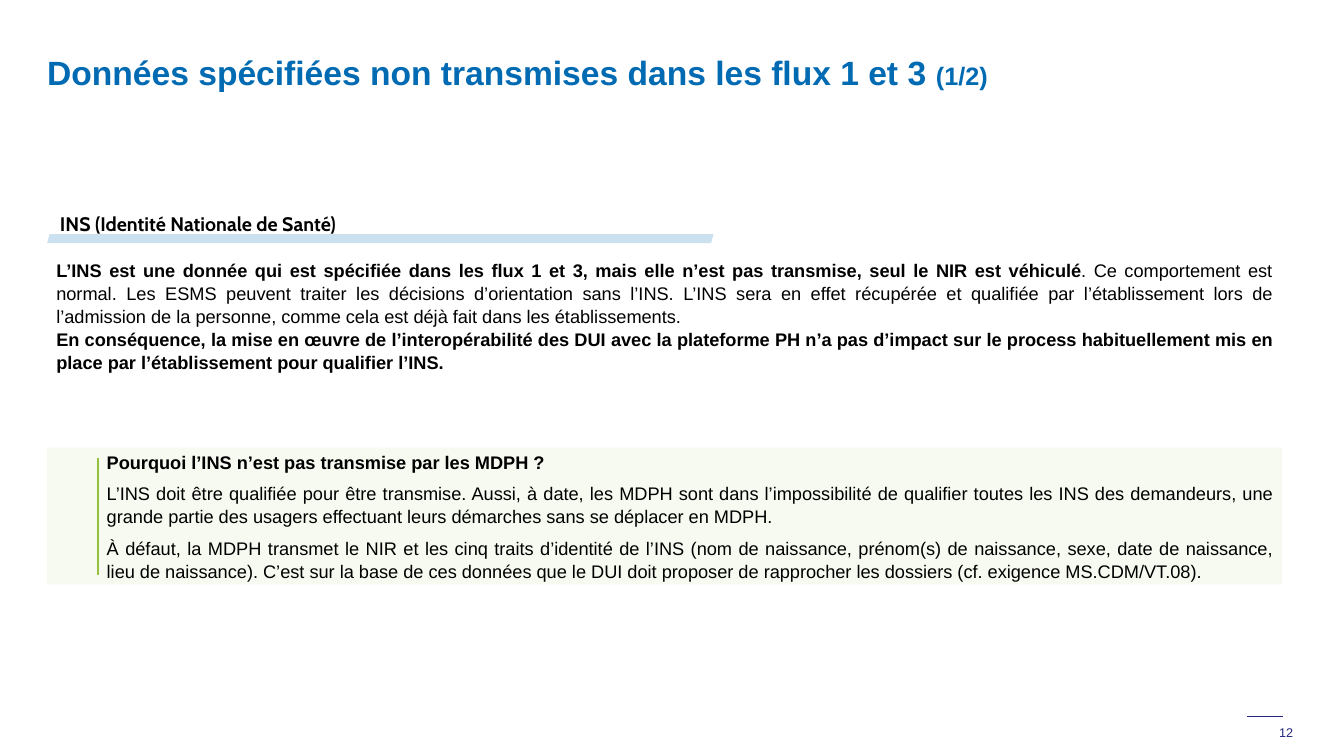
from pptx import Presentation
from pptx.dml.color import RGBColor
from pptx.enum.shapes import MSO_CONNECTOR, MSO_SHAPE
from pptx.enum.text import MSO_ANCHOR, PP_ALIGN
from pptx.oxml.ns import qn
from pptx.util import Cm, Pt
from lxml import etree

BLUE = RGBColor(0x00, 0x6A, 0xB2)
NAVY = RGBColor(0x23, 0x27, 0x7E)
BLACK = RGBColor(0x00, 0x00, 0x00)
GREEN = RGBColor(0x95, 0xC2, 0x3D)
PALE_GREEN = RGBColor(0xF7, 0xFA, 0xF0)

RECTANGLE = MSO_SHAPE.RECTANGLE
PARALLELOGRAM = MSO_SHAPE.PARALLELOGRAM
STRAIGHT = MSO_CONNECTOR.STRAIGHT
TOP, MIDDLE, BOTTOM = MSO_ANCHOR.TOP, MSO_ANCHOR.MIDDLE, MSO_ANCHOR.BOTTOM
LEFT, RIGHT, JUSTIFY = PP_ALIGN.LEFT, PP_ALIGN.RIGHT, PP_ALIGN.JUSTIFY

MARGIN = 1.19
NO_INSETS = (0, 0, 0, 0)
DEFAULT_INSETS = (0.25, 0.13, 0.25, 0.13)

INS_TEXT = [
    [("L’INS est une donnée qui est spécifiée dans les flux 1 et 3, mais elle n’est pas "
      "transmise, seul le NIR est véhiculé", True),
     (". Ce comportement est normal. Les ESMS peuvent traiter les décisions d’orientation "
      "sans l’INS. L’INS sera en effet récupérée et qualifiée par l’établissement lors de "
      "l’admission de la personne, comme cela est déjà fait dans les établissements.", False)],
    [("En conséquence, la mise en œuvre de l’interopérabilité des DUI avec la plateforme PH "
      "n’a pas d’impact sur le process habituellement mis en place par l’établissement pour "
      "qualifier l’INS.", True)],
]
WHY_TEXT = [
    [("Pourquoi l’INS n’est pas transmise par les MDPH ?", True)],
    [("L’INS doit être qualifiée pour être transmise. Aussi, à date, les MDPH sont dans "
      "l’impossibilité de qualifier toutes les INS des demandeurs, une grande partie des "
      "usagers effectuant leurs démarches sans se déplacer en MDPH.", False)],
    [("À défaut, la MDPH transmet le NIR et les cinq traits d’identité de l’INS (nom de "
      "naissance, prénom(s) de naissance, sexe, date de naissance, lieu de naissance). C’est "
      "sur la base de ces données que le DUI doit proposer de rapprocher les dossiers "
      "(cf. exigence MS.CDM/VT.08).", False)],
]


def set_frame(box, anchor, insets):
    """Wrap the text and set its anchor and its left, top, right and bottom insets in cm."""
    frame = box.text_frame
    frame.word_wrap = True
    frame.vertical_anchor = anchor
    (frame.margin_left, frame.margin_top,
     frame.margin_right, frame.margin_bottom) = map(Cm, insets)
    return frame


def set_font(font, size, color, name="Arial", bold=False):
    font.name, font.size, font.bold = name, Pt(size), bold
    font.color.rgb = color


def add_label(page, text, place, size, color, anchor=MIDDLE, insets=NO_INSETS,
              align=LEFT, name="Arial", bold=True):
    box = page.shapes.add_textbox(*map(Cm, place))
    para = set_frame(box, anchor, insets).paragraphs[0]
    para.text = text
    para.alignment = align
    set_font(para.font, size, color, name, bold)
    return para


def fill_body(frame, paragraphs, space_after=0):
    """Write justified paragraphs, each a list of (text, bold) spans."""
    for index, spans in enumerate(paragraphs):
        para = frame.add_paragraph() if index else frame.paragraphs[0]
        para.alignment = JUSTIFY
        para.line_spacing = 1.05
        para.space_after = Pt(space_after)
        set_font(para.font, 13, BLACK, bold=spans[0][1])
        for text, bold in spans:
            span = para.add_run()
            span.text = text
            if bold != spans[0][1]:
                span.font.bold = bold


def add_block(page, preset, place, color, opacity=100):
    block = page.shapes.add_shape(preset, *map(Cm, place))
    block.shadow.inherit = False
    block.line.fill.background()
    block.fill.solid()
    block.fill.fore_color.rgb = color
    if opacity < 100:
        tint = block.fill._xPr.find(".//" + qn("a:srgbClr"))
        etree.SubElement(tint, qn("a:alpha")).set("val", str(opacity * 1000))
    return block


def add_rule(page, start_x, start_y, end_x, end_y, color, width):
    rule = page.shapes.add_connector(STRAIGHT, Cm(start_x), Cm(start_y), Cm(end_x), Cm(end_y))
    rule.line.color.rgb = color
    rule.line.width = Pt(width)
    etree.SubElement(rule._element.spPr, qn("a:effectLst"))


def main():
    deck = Presentation()
    deck.slide_width, deck.slide_height = Cm(33.87), Cm(19.05)
    page = deck.slides.add_slide(deck.slide_layouts[6])

    add_label(page, "12", (31.42, 18.08, 1.17, 0.56), 9, NAVY, BOTTOM, align=RIGHT, bold=False)
    add_rule(page, 32.33, 18.06, 31.42, 18.06, NAVY, 0.5)

    title = add_label(page, "Données spécifiées non transmises dans les flux 1 et 3 ",
                      (MARGIN, 0.76, 25.98, 1.57), 24, BLUE, BOTTOM)
    part = title.add_run()
    part.text = "(1/2)"
    part.font.size = Pt(18)

    add_label(page, "INS (Identité Nationale de Santé)", (1.26, 4.98, 17.43, 1.32), 14, BLACK,
              insets=DEFAULT_INSETS, name="Cabin")
    add_block(page, PARALLELOGRAM, (MARGIN, 5.9, 16.79, 0.23), BLUE, opacity=20)

    body = page.shapes.add_textbox(Cm(1.17), Cm(6.38), Cm(31.14), Cm(3.58))
    fill_body(set_frame(body, TOP, DEFAULT_INSETS), INS_TEXT)

    why = add_block(page, RECTANGLE, (MARGIN, 11.28, 31.12, 3.45), PALE_GREEN)
    fill_body(set_frame(why, MIDDLE, (1.5, 0.13, 0.25, 0.13)), WHY_TEXT, space_after=6)
    add_rule(page, 2.46, 11.53, 2.46, 14.5, GREEN, 1.5)

    deck.save("out.pptx")


if __name__ == "__main__":
    main()
